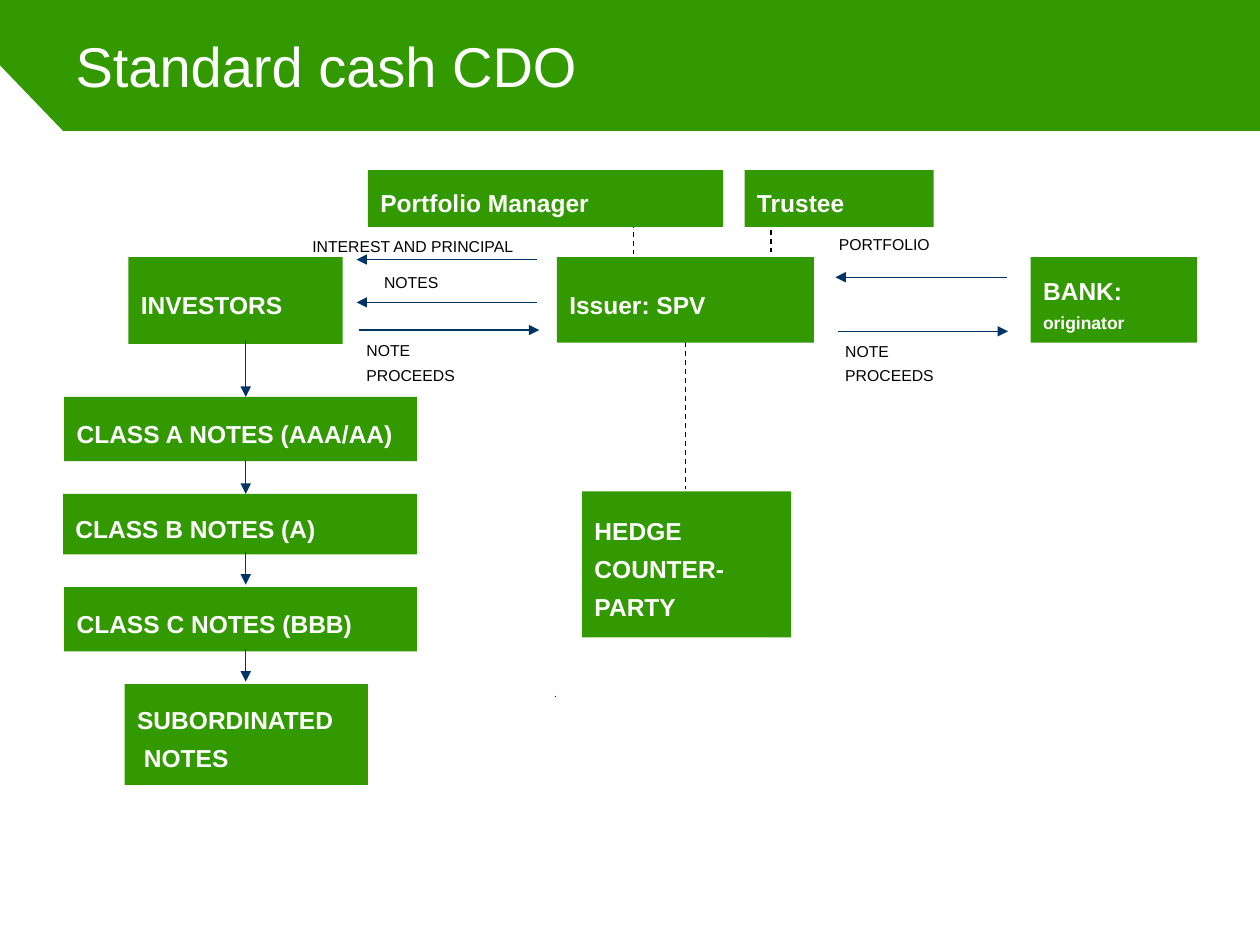
from lxml.etree import SubElement
from pptx import Presentation
from pptx.dml.color import RGBColor
from pptx.enum.dml import MSO_LINE
from pptx.enum.shapes import MSO_CONNECTOR, MSO_SHAPE
from pptx.enum.text import MSO_ANCHOR, PP_ALIGN
from pptx.oxml.ns import qn
from pptx.util import Inches, Pt

GREEN = RGBColor(0x33, 0x99, 0x00)
WHITE = RGBColor(0xFF, 0xFF, 0xFF)
BLACK = RGBColor(0x00, 0x00, 0x00)
NAVY = RGBColor(0x00, 0x33, 0x66)
FLOW_X = 1.95

# Text, left, top, width, height; "\v" breaks a line within a paragraph
PARTIES = [
    ("Issuer: SPV", 4.42, 2.04, 2.04, 0.68),
    ("BANK:\noriginator", 8.18, 2.04, 1.32, 0.68),
    ("HEDGE\nCOUNTER-\nPARTY", 4.62, 3.9, 1.66, 1.16),
    ("CLASS A NOTES (AAA/AA)", 0.51, 3.15, 2.8, 0.51),
    ("CLASS B NOTES (A)", 0.5, 3.92, 2.81, 0.48),
    ("CLASS C NOTES (BBB)", 0.51, 4.66, 2.8, 0.51),
    ("SUBORDINATED\v NOTES", 0.99, 5.43, 1.93, 0.8),
    ("INVESTORS", 1.02, 2.04, 1.7, 0.69),
    ("Portfolio Manager", 2.92, 1.35, 2.82, 0.45),
    ("Trustee", 5.91, 1.35, 1.5, 0.45),
]
LABELS = [
    ("INTEREST AND PRINCIPAL", 2.38, 1.75, 2.39, 0.36),
    ("NOTES", 2.95, 2.04, 1.14, 0.36),
    ("NOTE \vPROCEEDS", 2.81, 2.72, 1.41, 0.27),
    ("PORTFOLIO", 6.56, 1.78, 1.5, 0.27),
    ("NOTE \vPROCEEDS", 6.61, 2.68, 1.58, 0.36),
]
# Start x, end x, y
CASH_FLOWS = [
    (4.26, 2.83, 2.06),
    (4.26, 2.83, 2.4),
    (2.85, 4.28, 2.62),
    (7.99, 6.63, 2.2),
    (6.65, 8, 2.63),
]
# Start y, end y
SENIORITY_STEPS = [(2.7, 3.15), (3.65, 3.92), (4.38, 4.64), (5.15, 5.41)]
# x, start y, end y
SERVICE_LINKS = [(5.44, 2.64, 3.88), (6.12, 1.75, 2), (5.03, 1.77, 2.02)]


def style_font(font, size, color, bold=False):
    font.name = "Arial"
    font.size = Pt(size)
    font.bold = bold
    font.color.rgb = color


def write_text(shape, text, size, color, bold=False, anchor=MSO_ANCHOR.MIDDLE):
    frame = shape.text_frame
    frame.text = text
    frame.word_wrap = True
    frame.vertical_anchor = anchor
    for para in frame.paragraphs:
        para.alignment = PP_ALIGN.LEFT
        para.line_spacing = 1.3
        for span in para.runs:
            style_font(span.font, size, color, bold)


def add_party(page, text, *place):
    box = page.shapes.add_shape(MSO_SHAPE.RECTANGLE, *map(Inches, place))
    box.shadow.inherit = False
    box.fill.solid()
    box.fill.fore_color.rgb = GREEN
    box.line.fill.background()
    write_text(box, text, 14, WHITE, bold=True)
    return box


def add_label(page, text, *place, size=9, anchor=MSO_ANCHOR.MIDDLE):
    box = page.shapes.add_textbox(*map(Inches, place))
    write_text(box, text, size, BLACK, anchor=anchor)


def add_line(page, color, *ends):
    line = page.shapes.add_connector(MSO_CONNECTOR.STRAIGHT, *map(Inches, ends))
    line.line.color.rgb = color
    line.line.width = Pt(0.75)
    SubElement(line._element.spPr, qn("a:effectLst"))
    return line


def add_arrow(page, *ends):
    arrow = add_line(page, NAVY, *ends)
    SubElement(arrow.line._get_or_add_ln(), qn("a:tailEnd"), type="triangle")


def add_dashed_link(page, *ends):
    add_line(page, BLACK, *ends).line.dash_style = MSO_LINE.DASH


def add_backdrop(page):
    """Green page with a white body that leaves a slanted title band."""
    page.background.fill.solid()
    page.background.fill.fore_color.rgb = GREEN
    corners = [(0, 0.52), (0, 7.5), (10, 7.5), (10, 1.04)]
    builder = page.shapes.build_freeform(Inches(0.5), Inches(1.04))
    builder.add_line_segments([(Inches(x), Inches(y)) for x, y in corners])
    body = builder.convert_to_shape()
    body.shadow.inherit = False
    body.fill.solid()
    body.fill.fore_color.rgb = WHITE
    body.line.fill.background()


def set_title(page, text):
    title = page.shapes.title
    title.left, title.top = Inches(0.5), Inches(0)
    title.width, title.height = Inches(9), Inches(1.04)
    title.text_frame.text = text
    title.text_frame.vertical_anchor = MSO_ANCHOR.MIDDLE
    para = title.text_frame.paragraphs[0]
    para.alignment = PP_ALIGN.LEFT
    style_font(para.runs[0].font, 32, WHITE)


def main():
    deck = Presentation()
    deck.slide_width, deck.slide_height = Inches(10), Inches(7.5)
    page = deck.slides.add_slide(deck.slide_layouts[5])
    add_backdrop(page)
    set_title(page, "Standard cash CDO")

    for x, start, end in SERVICE_LINKS:
        add_dashed_link(page, x, start, x, end)
    add_label(page, ".", 4.3, 5.37, 5.2, 1.1, size=6, anchor=MSO_ANCHOR.TOP)
    parties = {party[0]: add_party(page, *party) for party in PARTIES}
    bank = parties["BANK:\noriginator"]
    bank.text_frame.paragraphs[1].runs[0].font.size = Pt(10)
    for label in LABELS:
        add_label(page, *label)
    for start, end, y in CASH_FLOWS:
        add_arrow(page, start, y, end, y)
    for start, end in SENIORITY_STEPS:
        add_arrow(page, FLOW_X, start, FLOW_X, end)

    deck.save("out.pptx")


if __name__ == "__main__":
    main()
